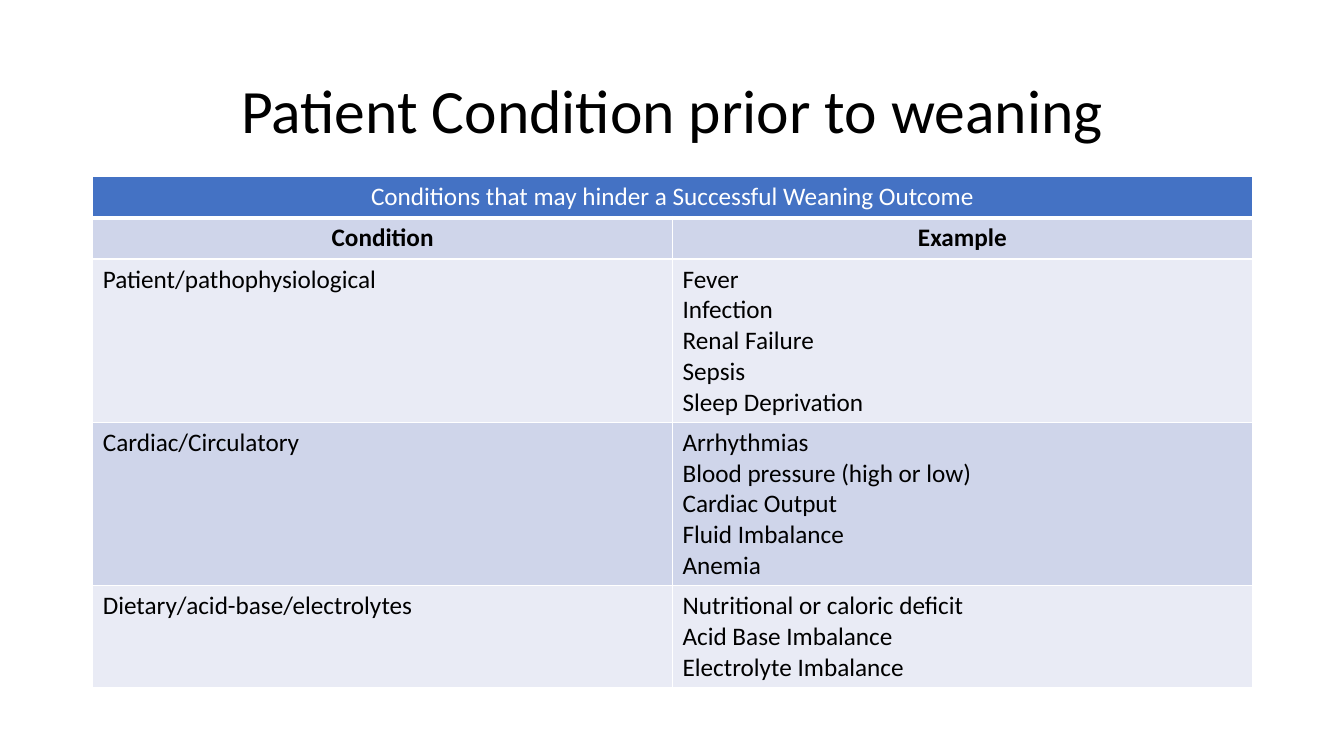
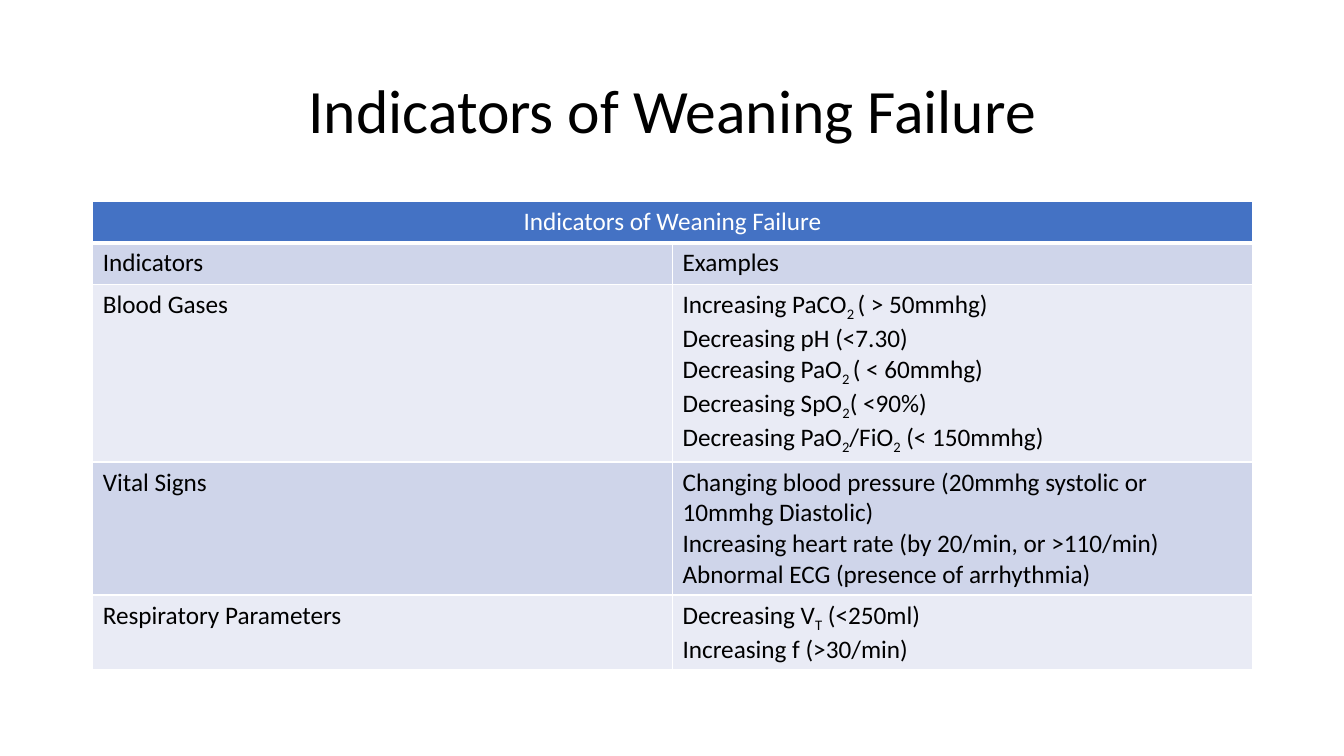
"""Build two slides on ventilator weaning, each with a title and a banded table."""
from dataclasses import dataclass

import lxml.etree
import pptx
import pptx.dml.color
import pptx.enum.text
import pptx.oxml.ns
import pptx.util

Inches = pptx.util.Inches
Pt = pptx.util.Pt
RGB = pptx.dml.color.RGBColor.from_string
CENTER = pptx.enum.text.PP_ALIGN.CENTER
qn = pptx.oxml.ns.qn


@dataclass(frozen=True)
class Theme:
    font: str = "Calibri"
    title_size: float = 44
    body_size: float = 18
    text: str = "000000"
    white: str = "FFFFFF"
    header: str = "4472C4"
    bands: tuple[str, str] = ("CFD5EA", "E9EBF5")
    border: float = 1
    header_border: float = 3
    left: float = 0.92
    width: float = 11.5


@dataclass(frozen=True)
class Row:
    label: str
    examples: tuple[str, ...]
    height: float


@dataclass(frozen=True)
class TableSlide:
    title: str
    heading: str
    columns: tuple[str, str]
    strong_columns: bool
    top: float
    rows: tuple[Row, ...]


THEME = Theme()
HEADING_HEIGHT = 0.41

SLIDES = (
    TableSlide(
        "Patient Condition prior to weaning",
        "Conditions that may hinder a Successful Weaning Outcome",
        ("Condition", "Example"), True, 1.75,
        (
            Row("Patient/pathophysiological",
                ("Fever", "Infection", "Renal Failure", "Sepsis", "Sleep Deprivation"), 1.62),
            Row("Cardiac/Circulatory",
                ("Arrhythmias", "Blood pressure (high or low)", "Cardiac Output",
                 "Fluid Imbalance", "Anemia"), 1.62),
            Row("Dietary/acid-base/electrolytes",
                ("Nutritional or caloric deficit", "Acid Base Imbalance",
                 "Electrolyte Imbalance"), 1.01),
        ),
    ),
    TableSlide(
        "Indicators of Weaning Failure",
        "Indicators of Weaning Failure",
        ("Indicators", "Examples"), False, 2,
        (
            Row("Blood Gases",
                ("Increasing PaCO|2 |( > 50mmhg)", "Decreasing pH (<7.30)",
                 "Decreasing PaO|2 |( < 60mmhg)", "Decreasing SpO|2|( <90%)",
                 "Decreasing PaO|2|/FiO|2| (< 150mmhg)"), 1.76),
            Row("Vital Signs",
                ("Changing blood pressure (20mmhg systolic or 10mmhg Diastolic)",
                 "Increasing heart rate (by 20/min, or >110/min)",
                 "Abnormal ECG (presence of arrhythmia)"), 1.32),
            Row("Respiratory Parameters",
                ("Decreasing V|T| (<250ml)", "Increasing f (>30/min)"), 0.74),
        ),
    ),
)


def write_lines(tf, lines: tuple[str, ...], size: float, color: str,
                centered: bool = False, bold: bool = False) -> None:
    """Write one paragraph per line, lowering every second part between bars."""
    tf.text = "\n".join(line.split("|")[0] for line in lines)
    for p, line in zip(tf.paragraphs, lines):
        if centered:
            p.alignment = CENTER
        for part in line.split("|")[1:]:
            p.add_run().text = part
        for i, r in enumerate(p.runs):
            r.font.name = THEME.font
            r.font.size = Pt(size)
            r.font.bold = bold
            r.font.color.rgb = RGB(color)
            if i % 2:
                r.font._element.set("baseline", "-25000")


def style_cell(cell, fill: str, bottom: float) -> None:
    """Give a cell white borders and a solid fill."""
    tc_pr = cell._tc.get_or_add_tcPr()
    for side in ("lnL", "lnR", "lnT", "lnB"):
        width = bottom if side == "lnB" else THEME.border
        ln = lxml.etree.SubElement(tc_pr, qn(f"a:{side}"), w=str(Pt(width)))
        solid = lxml.etree.SubElement(ln, qn("a:solidFill"))
        lxml.etree.SubElement(solid, qn("a:srgbClr"), val=THEME.white)
    cell.fill.solid()
    cell.fill.fore_color.rgb = RGB(fill)


def add_title(s, title: str) -> None:
    """Add the centred slide title."""
    sp = s.shapes.add_textbox(Inches(THEME.left), Inches(0.4), Inches(THEME.width), Inches(1.45))
    tf = sp.text_frame
    tf.word_wrap = True
    tf.vertical_anchor = pptx.enum.text.MSO_ANCHOR.MIDDLE
    write_lines(tf, (title,), THEME.title_size, THEME.text, centered=True)
    tf.paragraphs[0].line_spacing = 0.9


def add_condition_table(s, content: TableSlide) -> None:
    """Add the table with its merged heading, column names and banded rows."""
    heights = [HEADING_HEIGHT] * 2 + [row.height for row in content.rows]
    table = s.shapes.add_table(
        len(heights), 2, Inches(THEME.left), Inches(content.top),
        Inches(THEME.width), Inches(sum(heights))).table
    for i, height in enumerate(heights):
        table.rows[i].height = Inches(height)
        for cell in table.rows[i].cells:
            fill = THEME.bands[(i - 1) % 2] if i else THEME.header
            style_cell(cell, fill, THEME.border if i else THEME.header_border)

    table.cell(0, 0).merge(table.cell(0, 1))
    write_lines(table.cell(0, 0).text_frame, (content.heading,), THEME.body_size,
                THEME.white, centered=True)
    strong = content.strong_columns
    for j, name in enumerate(content.columns):
        write_lines(table.cell(1, j).text_frame, (name,), THEME.body_size, THEME.text,
                    centered=strong, bold=strong)
    for i, row in enumerate(content.rows, start=2):
        for j, lines in enumerate(((row.label,), row.examples)):
            write_lines(table.cell(i, j).text_frame, lines, THEME.body_size, THEME.text)


def main() -> None:
    """Build and save the presentation."""
    prs = pptx.Presentation()
    prs.slide_width = Inches(13.33)
    prs.slide_height = Inches(7.5)
    for content in SLIDES:
        s = prs.slides.add_slide(prs.slide_layouts[6])
        add_title(s, content.title)
        add_condition_table(s, content)
    prs.save("out.pptx")


if __name__ == "__main__":
    main()
